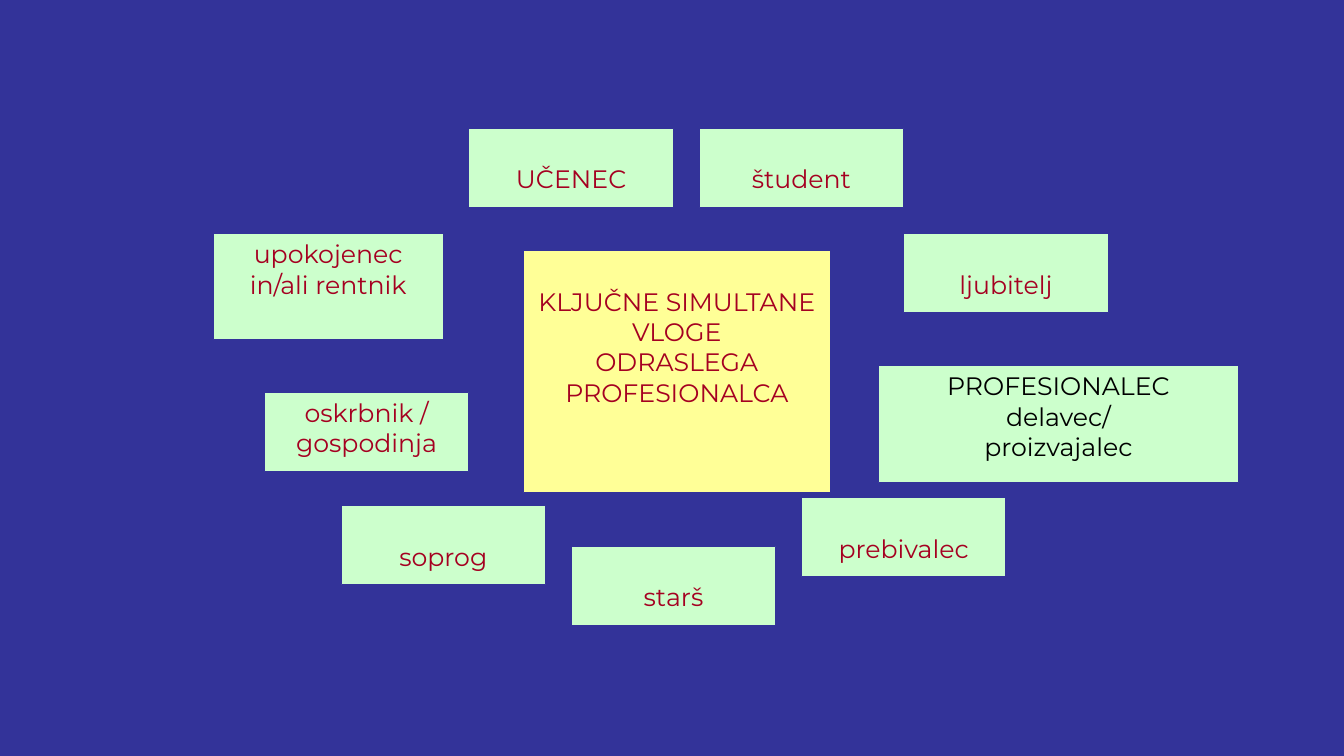
from pptx import Presentation
from pptx.dml.color import RGBColor
from pptx.enum.shapes import MSO_SHAPE
from pptx.enum.text import MSO_ANCHOR, PP_ALIGN
from pptx.util import Inches, Pt

INDIGO = RGBColor(0x33, 0x33, 0x99)
YELLOW = RGBColor(0xFF, 0xFF, 0x97)
MINT = RGBColor(0xCC, 0xFF, 0xCC)
CRIMSON = RGBColor(0xA5, 0x00, 0x21)
BLACK = RGBColor(0x00, 0x00, 0x00)

# Diagram area in inches, split into columns and rows
LEFT, TOP = 1.86, 1.01
COLUMN, ROW = 9.64 / 38, 5.5 / 21


class RoleMap:
    font = "Montserrat"
    size = Pt(18)
    inset = 0.05
    line_height = 0.3

    def __init__(self, presentation):
        blank = presentation.slide_layouts[6]
        self.slide = presentation.slides.add_slide(blank)
        background = self.slide.background.fill
        background.solid()
        background.fore_color.rgb = INDIGO

    def box(self, lines, column, row, columns=8, rows=3, fill=MINT,
            color=CRIMSON, lowered=False):
        """Place a text box on the grid; lowered starts its text one line down."""
        box = self.slide.shapes.add_shape(
            MSO_SHAPE.RECTANGLE,
            Inches(LEFT + column * COLUMN), Inches(TOP + row * ROW),
            Inches(columns * COLUMN), Inches(rows * ROW))
        box.shadow.inherit = False
        box.fill.solid()
        box.fill.fore_color.rgb = fill
        box.line.color.rgb = INDIGO
        box.line.width = Pt(0.75)

        frame = box.text_frame
        frame.word_wrap = True
        frame.vertical_anchor = MSO_ANCHOR.TOP
        frame.margin_top = Inches(self.inset + lowered * self.line_height)
        for index, line in enumerate(lines):
            paragraph = frame.add_paragraph() if index else frame.paragraphs[0]
            paragraph.alignment = PP_ALIGN.CENTER
            self.run(paragraph, line, color)

    def run(self, paragraph, text, color):
        run = paragraph.add_run()
        run.text = text
        run.font.name = self.font
        run.font.size = self.size
        run.font.color.rgb = color


def main():
    presentation = Presentation()
    presentation.slide_width = Inches(13.33)
    presentation.slide_height = Inches(7.5)
    role_map = RoleMap(presentation)

    role_map.box(["KLJUČNE SIMULTANE VLOGE", "ODRASLEGA PROFESIONALCA"],
                 13.13, 5.65, 12, 9.17, fill=YELLOW, lowered=True)

    single_line_roles = [
        ("UČENEC", 11, 1),
        ("študent", 20, 1),
        ("ljubitelj", 28, 5),
        ("starš", 15, 16.83),
        ("soprog", 6, 15.3),
        ("prebivalec", 24, 15),
    ]
    for role, column, row in single_line_roles:
        role_map.box([role], column, row, lowered=True)

    role_map.box(["upokojenec in/ali rentnik"], 1, 5, 9, 4)
    role_map.box(["oskrbnik /", "gospodinja"], 3, 11)
    role_map.box(["PROFESIONALEC", "delavec/", "proizvajalec"],
                 27, 10, 14.1, 4.43, color=BLACK)

    presentation.save("out.pptx")


if __name__ == "__main__":
    main()
